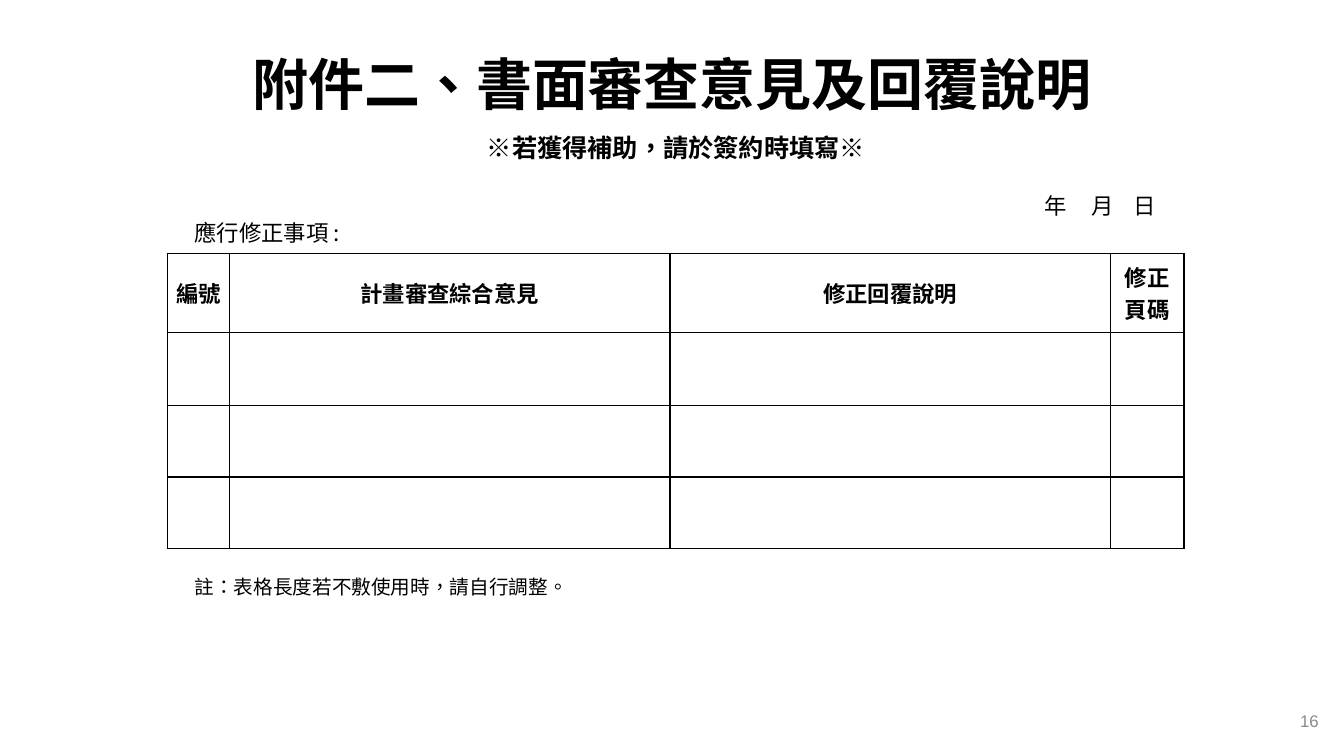
from lxml import etree
from pptx import Presentation
from pptx.dml.color import RGBColor
from pptx.enum.text import MSO_ANCHOR as ANCHOR, PP_ALIGN as ALIGN
from pptx.oxml.ns import qn
from pptx.util import Pt

# Content
TITLE = "附件二、書面審查意見及回覆說明"
SUBTITLE = "※若獲得補助，請於簽約時填寫※"
DATE = "年\t月\t日"
LABEL = "應行修正事項 :"
NOTE = "註：表格長度若不敷使用時，請自行調整。"
PAGE = "16"
HEADERS = ["編號", "計畫審查綜合意見", "修正回覆說明", "修正\n頁碼"]

# Style and layout
BLACK = RGBColor(0x00, 0x00, 0x00)
WHITE = RGBColor(0xFF, 0xFF, 0xFF)
GREY = RGBColor(0x89, 0x89, 0x89)
CJK, LATIN = "Noto Sans CJK SC", "Arial"
COL_WIDTHS = [44.6, 314.6, 314.6, 52.6]
ROW_HEIGHTS = [56.4, 52.2, 51.2, 51.2]
TABLE_LEFT, TABLE_TOP = 119.4, 181
TEXT_LEFT, TEXT_WIDTH = 139, 687.6
DATE_LEFT, DATE_WIDTH, DATE_TABS = 746, 90, [33.4, 64]


def format_text(tf, size, bold=False, color=BLACK, font=CJK, align=ALIGN.LEFT):
    for p in tf.paragraphs:
        p.alignment = align
        for r in p.runs:
            r.font.size, r.font.bold, r.font.name = Pt(size), bold, font
            r.font.color.rgb = color
            rPr = r.font._element
            rPr.set("lang", "zh-TW")
            ea = etree.Element(qn("a:ea"), typeface=CJK)
            rPr.find(qn("a:latin")).addnext(ea)


def add_text(s, text, left, middle, width, size, **style):
    height = size * 2
    tf = s.shapes.add_textbox(Pt(left), Pt(middle - height / 2), Pt(width), Pt(height)).text_frame
    tf.word_wrap = True
    tf.vertical_anchor = ANCHOR.MIDDLE
    tf.margin_left = tf.margin_right = tf.margin_top = tf.margin_bottom = 0
    tf.text = text
    format_text(tf, size, **style)
    return tf


def add_borders(cell):
    tcPr = cell._tc.get_or_add_tcPr()
    for i, side in enumerate(("lnL", "lnR", "lnT", "lnB")):
        ln = etree.Element(qn(f"a:{side}"), w=str(Pt(1)))
        fill = etree.SubElement(ln, qn("a:solidFill"))
        etree.SubElement(fill, qn("a:srgbClr"), val=str(BLACK))
        tcPr.insert(i, ln)


def add_review_table(s):
    table = s.shapes.add_table(len(ROW_HEIGHTS), len(COL_WIDTHS), Pt(TABLE_LEFT), Pt(TABLE_TOP),
                               Pt(sum(COL_WIDTHS)), Pt(sum(ROW_HEIGHTS))).table
    table.horz_banding = False
    for col, width in zip(table.columns, COL_WIDTHS):
        col.width = Pt(width)
    for row, height in zip(table.rows, ROW_HEIGHTS):
        row.height = Pt(height)
    for cell in table.iter_cells():
        cell.fill.solid()
        cell.fill.fore_color.rgb = WHITE
        add_borders(cell)
    for col, header in enumerate(HEADERS):
        cell = table.cell(0, col)
        cell.margin_left = cell.margin_right = Pt(1.4)
        cell.margin_top = cell.margin_bottom = 0
        cell.vertical_anchor = ANCHOR.MIDDLE
        cell.text_frame.text = header
        format_text(cell.text_frame, 16, bold=True, align=ALIGN.CENTER)


def main():
    prs = Presentation()
    prs.slide_width, prs.slide_height = Pt(960), Pt(540)
    s = prs.slides.add_slide(prs.slide_layouts[6])

    # Headings
    add_text(s, TITLE, 48, 59.5, 864, 40, bold=True, align=ALIGN.CENTER)
    add_text(s, SUBTITLE, TEXT_LEFT, 105, TEXT_WIDTH, 18, bold=True, align=ALIGN.CENTER)

    # Date line, spaced by tab stops
    date = add_text(s, DATE, DATE_LEFT, 147, DATE_WIDTH, 16)
    tabs = etree.SubElement(date.paragraphs[0]._p.get_or_add_pPr(), qn("a:tabLst"))
    for pos in DATE_TABS:
        etree.SubElement(tabs, qn("a:tab"), pos=str(Pt(pos)), algn="l")

    # Table with its label and note
    add_text(s, LABEL, TEXT_LEFT, 166, TEXT_WIDTH, 16)
    add_review_table(s)
    add_text(s, NOTE, TEXT_LEFT, 419.4, TEXT_WIDTH, 14)

    # Page number
    add_text(s, PAGE, 725, 515, 217, 12, color=GREY, font=LATIN, align=ALIGN.RIGHT)
    prs.save("out.pptx")


if __name__ == "__main__":
    main()
